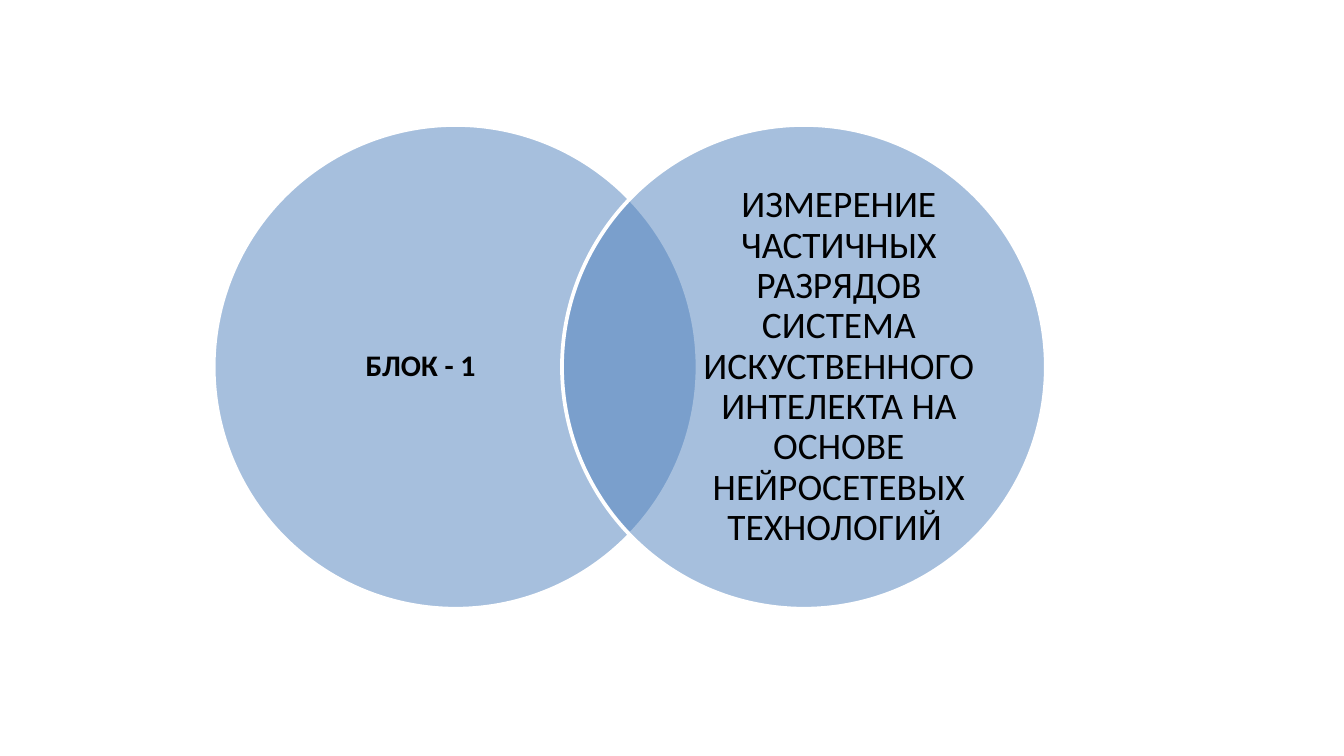
from lxml.etree import SubElement
from pptx import Presentation
from pptx.dml.color import RGBColor
from pptx.enum.shapes import MSO_SHAPE
from pptx.enum.text import MSO_ANCHOR, PP_ALIGN
from pptx.oxml.ns import qn
from pptx.util import Inches, Pt

COLORS = {"circle": "4F81BD", "outline": "FFFFFF", "text": "000000"}
FONT = "Calibri"
WIDTH = 10
HEIGHT = WIDTH * 9 / 16
DIAMETER = 0.36 * WIDTH
LEFT, TOP = 1.59, 0.93
STEP = 0.72 * DIAMETER
OUTER_MARGIN = 0.5 / DIAMETER
TEXT_WIDTH, TEXT_HEIGHT = 2.08 / DIAMETER, 2.75 / DIAMETER


def rgb(name):
    return RGBColor.from_string(COLORS[name])


def add_circle(s, x, y, d):
    sp = s.shapes.add_shape(MSO_SHAPE.OVAL, Inches(x), Inches(y), Inches(d), Inches(d))
    sp.shadow.inherit = False
    sp.fill.solid()
    sp.fill.fore_color.rgb = rgb("circle")
    color = sp.fill._xPr.find(qn("a:solidFill"))[0]
    SubElement(color, qn("a:alpha"), val="50000")
    sp.line.color.rgb = rgb("outline")
    sp.line.width = Pt(2)


def add_label(s, x, y, w, h, text, size, bold):
    tf = s.shapes.add_textbox(Inches(x), Inches(y), Inches(w), Inches(h)).text_frame
    tf.word_wrap = True
    tf.vertical_anchor = MSO_ANCHOR.MIDDLE
    tf.margin_left = tf.margin_right = tf.margin_top = tf.margin_bottom = 0
    p = tf.paragraphs[0]
    p.alignment = PP_ALIGN.CENTER
    p.line_spacing = 0.9
    r = p.add_run()
    r.text = text
    r.font.name = FONT
    r.font.size = Pt(size)
    r.font.bold = bold
    r.font.color.rgb = rgb("text")


def add_venn_set(s, x, y, d, margin, text, size, bold):
    add_circle(s, x, y, d)
    label_top = y + d * (1 - TEXT_HEIGHT) / 2
    add_label(s, x + d * margin, label_top, d * TEXT_WIDTH, d * TEXT_HEIGHT,
              text, size, bold)


def main():
    prs = Presentation()
    prs.slide_width, prs.slide_height = Inches(WIDTH), Inches(HEIGHT)
    s = prs.slides.add_slide(prs.slide_layouts[6])
    sets = [
        (OUTER_MARGIN, "БЛОК - 1", 16, True),
        (1 - OUTER_MARGIN - TEXT_WIDTH,
         "ИЗМЕРЕНИЕ ЧАСТИЧНЫХ РАЗРЯДОВ СИСТЕМА ИСКУСТВЕННОГО ИНТЕЛЕКТА "
         "НА ОСНОВЕ НЕЙРОСЕТЕВЫХ ТЕХНОЛОГИЙ ", 20, False),
    ]
    for i, (margin, text, size, bold) in enumerate(sets):
        add_venn_set(s, LEFT + i * STEP, TOP, DIAMETER, margin, text, size, bold)
    prs.save("out.pptx")


if __name__ == "__main__":
    main()
